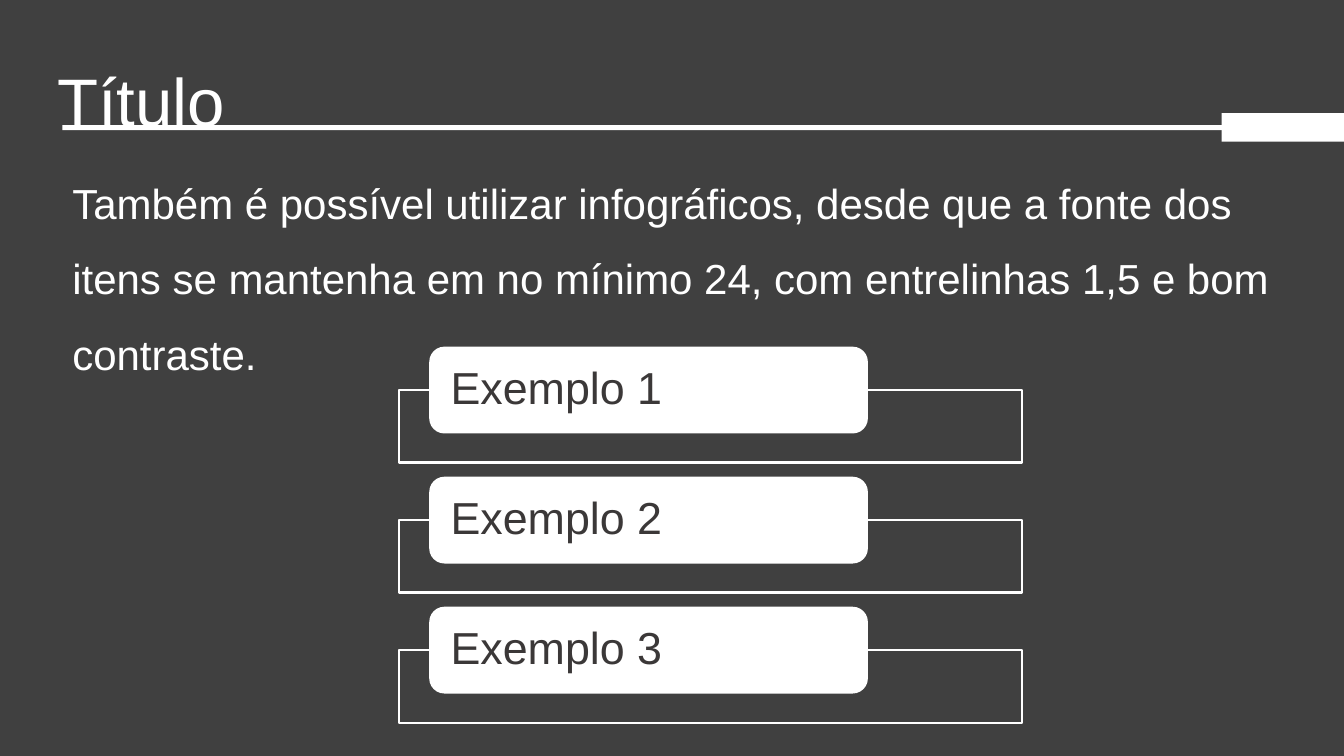
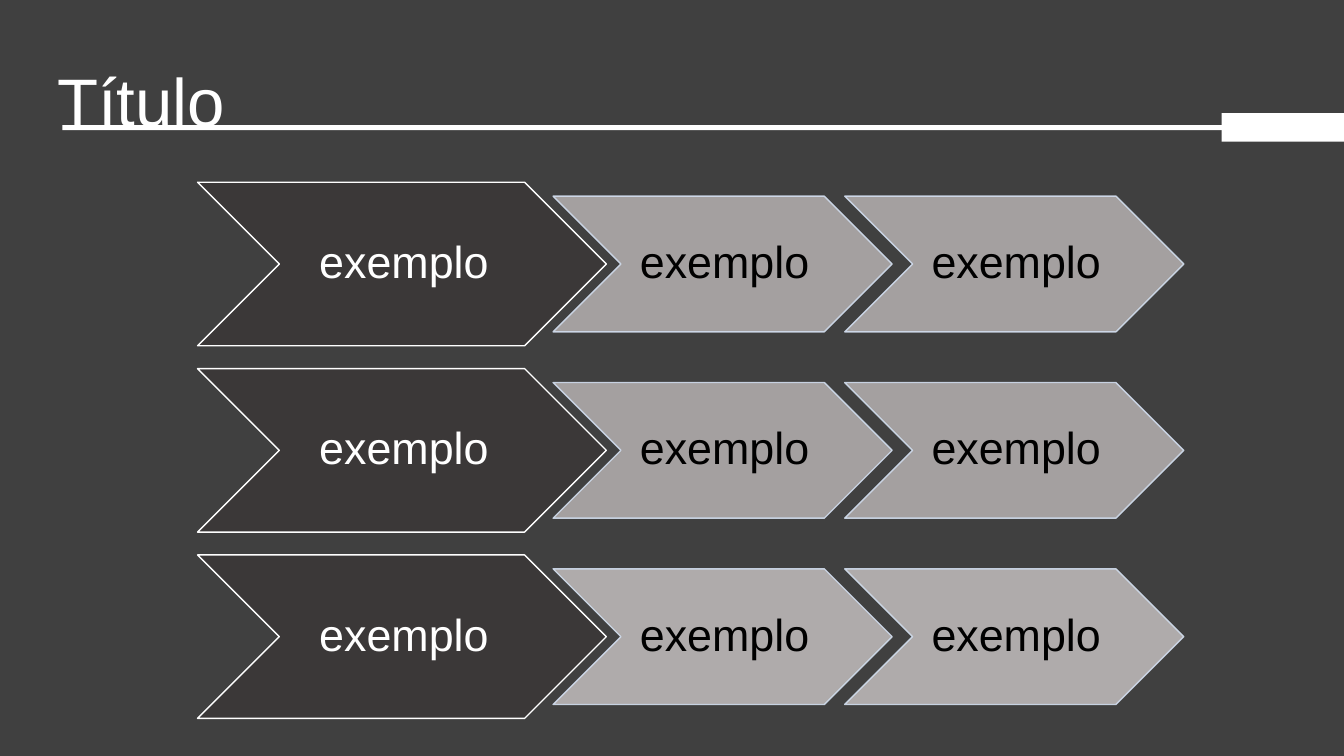
from lxml import etree
from pptx import Presentation
from pptx.dml.color import RGBColor
from pptx.enum.shapes import MSO_SHAPE as Preset
from pptx.enum.text import MSO_ANCHOR as Anchor, PP_ALIGN as Align
from pptx.oxml.ns import qn
from pptx.util import Pt

WIDTH, HEIGHT = 960, 540
FONT = "Arial"
WHITE, BLACK, BACKDROP, DARK, GRAY, PALE = "FFFFFF", "000000", "404040", "3B3838", "AFABAB", "D2DEEF"

TITLE = "Título"
BODY = ("Também é possível utilizar infográficos, desde que a fonte dos itens se mantenha "
        "em no mínimo 24, com entrelinhas 1,5 e bom contraste.")
LIST_ITEMS = ["Exemplo 1", "Exemplo 2", "Exemplo 3"]
PROCESS_ROWS = [
    (["exemplo", "exemplo", "exemplo"], 90),
    (["exemplo", "exemplo", "exemplo"], 90),
    (["exemplo", "exemplo", "exemplo"], 100),
]

LIST_TOP, LIST_PITCH = 248.4, 92.88
ROW_TOP, ROW_PITCH = 130.2, 133.1
LEAD_LEFT, LEAD_WIDTH, LEAD_HEIGHT = 141.1, 292, 116.8
STEP_LEFT, STEP_WIDTH, STEP_HEIGHT, STEP_PITCH = 395.1, 242.2, 96.9, 208.3


def color(value):
    return RGBColor.from_string(value)


def set_alpha(fill_parent, percent):
    if percent < 100:
        rgb = fill_parent.find(qn("a:solidFill")).find(qn("a:srgbClr"))
        etree.SubElement(rgb, qn("a:alpha")).set("val", str(percent * 1000))


def write(shape, text, size, ink, spacing, insets, anchor=Anchor.TOP, align=Align.LEFT, before=0):
    frame = shape.text_frame
    frame.word_wrap = True
    frame.vertical_anchor = anchor
    frame.margin_left, frame.margin_top, frame.margin_right, frame.margin_bottom = map(Pt, insets)
    paragraph = frame.paragraphs[0]
    paragraph.alignment = align
    paragraph.line_spacing = spacing
    paragraph.space_before = Pt(before)
    run = paragraph.add_run()
    run.text = text
    run.font.name = FONT
    run.font.size = Pt(size)
    run.font.color.rgb = color(ink)


def add_text(slide, box, text, size, before=0):
    shape = slide.shapes.add_textbox(*map(Pt, box))
    write(shape, text, size, WHITE, 1.5, (7.2, 3.6, 7.2, 3.6), before=before)


def add_block(slide, preset, box, fill=None, line=None, weight=1, fill_alpha=100, line_alpha=100):
    shape = slide.shapes.add_shape(preset, *map(Pt, box))
    shape.shadow.inherit = False
    if fill:
        shape.fill.solid()
        shape.fill.fore_color.rgb = color(fill)
        set_alpha(shape.fill._xPr, fill_alpha)
    else:
        shape.fill.background()
    if line:
        shape.line.color.rgb = color(line)
        shape.line.width = Pt(weight)
        set_alpha(shape.line._ln, line_alpha)
    else:
        shape.line.fill.background()
    return shape


def add_slide(presentation):
    slide = presentation.slides.add_slide(presentation.slide_layouts[6])
    slide.background.fill.solid()
    slide.background.fill.fore_color.rgb = color(BACKDROP)
    return slide


def add_title(slide):
    add_text(slide, (33.8, 10.1, 720, 74.2), TITLE, 48)
    add_block(slide, Preset.RECTANGLE, (44.6, 89.3, WIDTH - 44.6, 3.6), WHITE)
    add_block(slide, Preset.RECTANGLE, (872.6, 80.8, WIDTH - 872.6, 20.4), WHITE)


def add_list(slide):
    for index, label in enumerate(LIST_ITEMS):
        top = LIST_TOP + index * LIST_PITCH
        add_block(slide, Preset.RECTANGLE, (285.1, top + 30.2, 445, 51.8), line=WHITE, weight=1.5)
        tab = add_block(slide, Preset.ROUNDED_RECTANGLE, (307.4, top, 311.8, 60.5), WHITE, WHITE, 1.5)
        write(tab, label, 32, DARK, 0.9, (11.5, 0, 11.5, 0), Anchor.MIDDLE)


def add_process(slide):
    for row, (labels, alpha) in enumerate(PROCESS_ROWS):
        top = ROW_TOP + row * ROW_PITCH
        for column, label in enumerate(labels):
            if column == 0:
                box = (LEAD_LEFT, top, LEAD_WIDTH, LEAD_HEIGHT)
                chevron = add_block(slide, Preset.CHEVRON, box, DARK, WHITE)
            else:
                left = STEP_LEFT + (column - 1) * STEP_PITCH
                box = (left, top + (LEAD_HEIGHT - STEP_HEIGHT) / 2, STEP_WIDTH, STEP_HEIGHT)
                chevron = add_block(slide, Preset.CHEVRON, box, GRAY, PALE, 1, alpha, 90)
            ink = BLACK if column else WHITE
            write(chevron, label, 32, ink, 0.9, (2.9, 1.4, 0, 1.4), Anchor.MIDDLE, Align.CENTER)


def main():
    """Build the two infographic example slides."""
    presentation = Presentation()
    presentation.slide_width, presentation.slide_height = Pt(WIDTH), Pt(HEIGHT)
    list_slide = add_slide(presentation)
    add_text(list_slide, (44.6, 105.1, 897.8, 383), BODY, 30, before=10)
    add_list(list_slide)
    add_title(list_slide)
    process_slide = add_slide(presentation)
    add_process(process_slide)
    add_title(process_slide)
    presentation.save("out.pptx")


if __name__ == "__main__":
    main()
